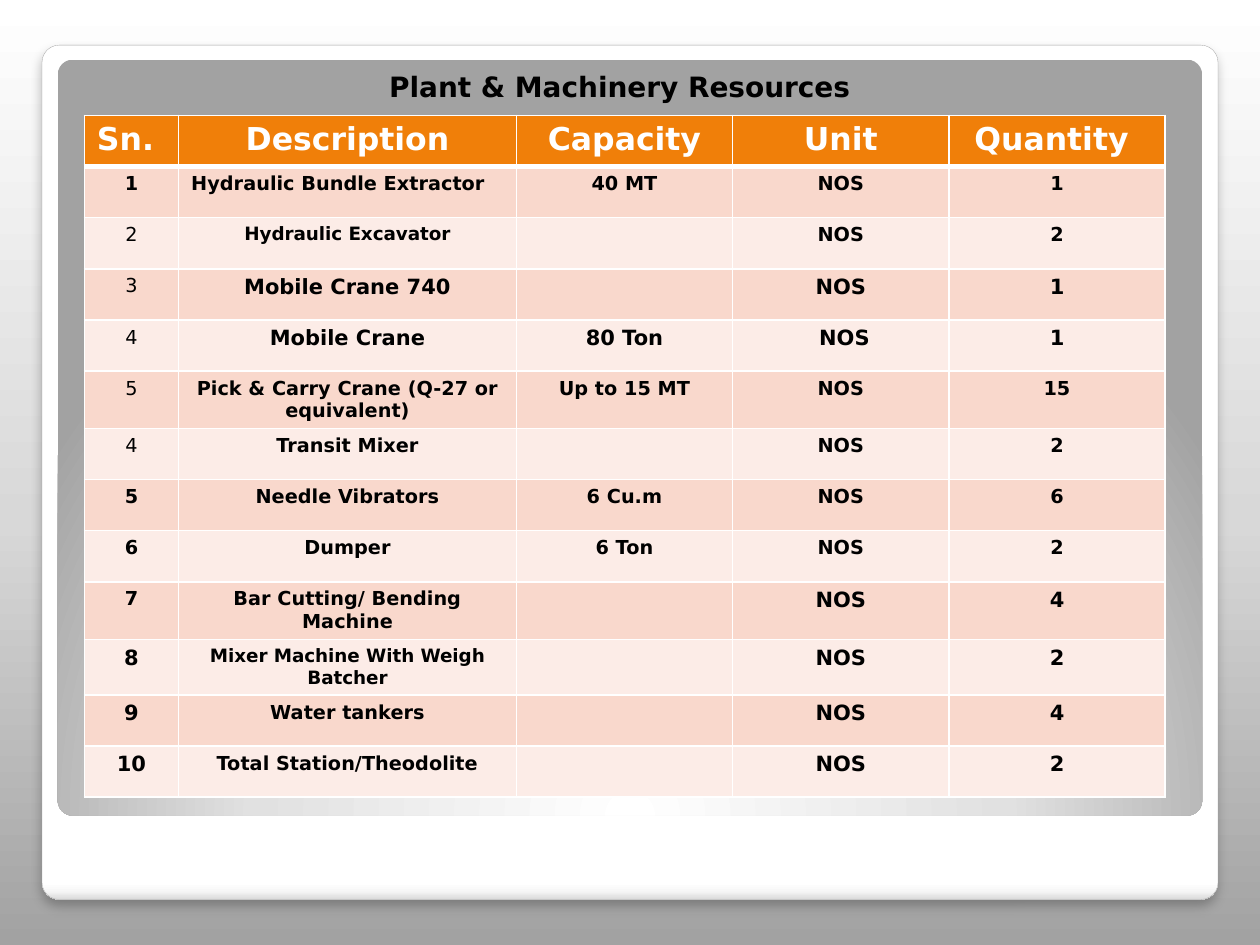
"""Build the Plant & Machinery Resources slide."""
import pptx
import pptx.dml.color
import pptx.enum.shapes
import pptx.enum.text
import pptx.oxml
import pptx.oxml.ns
import pptx.util

Pt = pptx.util.Pt
RGBColor = pptx.dml.color.RGBColor
CENTER = pptx.enum.text.PP_ALIGN.CENTER
LEFT = pptx.enum.text.PP_ALIGN.LEFT
qn = pptx.oxml.ns.qn
NS = pptx.oxml.ns.nsdecls("a")

FONT = "DejaVu Sans"
BLACK = RGBColor(0x00, 0x00, 0x00)
WHITE = RGBColor(0xFF, 0xFF, 0xFF)
ORANGE = RGBColor(0xF0, 0x7F, 0x09)
ROSE = RGBColor(0xF9, 0xD8, 0xCC)
PALE = RGBColor(0xFC, 0xEC, 0xE7)
SILVER = RGBColor(0xF7, 0xF7, 0xF7)
LIGHT = RGBColor(0xE1, 0xE1, 0xE1)
ASH = RGBColor(0xDA, 0xDA, 0xDA)
MIST = RGBColor(0xD8, 0xD8, 0xD8)
OUTLINE = RGBColor(0xA4, 0xA4, 0xA4)
GRAY = RGBColor(0xA2, 0xA2, 0xA2)

RADIAL = '<a:path path="circle"><a:fillToRect l="50000" t="175000" r="50000" b="-75000"/></a:path>'
LINEAR = '<a:lin ang="{}" scaled="0"/>'


def set_gradient(fill, props, stops, direction):
    fill.solid()
    gs = "".join(
        f'<a:gs pos="{pos * 1000}"><a:srgbClr val="{color}"/></a:gs>' for pos, color in stops
    )
    grad = pptx.oxml.parse_xml(
        f'<a:gradFill {NS} rotWithShape="1"><a:gsLst>{gs}</a:gsLst>{direction}</a:gradFill>'
    )
    props.replace(props.find(qn("a:solidFill")), grad)


def add_text(tf, text, size, color, bold=True, align=CENTER):
    p = tf.paragraphs[0]
    p.alignment = align
    r = p.add_run()
    r.text = text
    r.font.name = FONT
    r.font.size = Pt(size)
    r.font.bold = bold
    r.font.color.rgb = color


prs = pptx.Presentation()
prs.slide_width, prs.slide_height = Pt(720), Pt(540)
s = prs.slides.add_slide(prs.slide_layouts[6])

bg_fill = s.background.fill
bg_fill.solid()
set_gradient(bg_fill, s._element.find(".//" + qn("p:bgPr")),
             [(0, GRAY), (45, MIST), (100, WHITE)], LINEAR.format(16200000))

panels = [
    ((24, 25.8, 672, 488.2),
     [(0, WHITE), (98, WHITE), (99, SILVER), (100, ASH)], LINEAR.format(5400000)),
    ((33, 34.1, 654, 432), [(0, WHITE), (55, LIGHT), (100, GRAY)], RADIAL),
]
cards = []
for box, stops, direction in panels:
    sp = s.shapes.add_shape(pptx.enum.shapes.MSO_SHAPE.ROUNDED_RECTANGLE, *map(Pt, box))
    sp.adjustments[0] = 0.02
    sp.shadow.inherit = False
    sp.line.fill.background()
    set_gradient(sp.fill, sp._element.spPr, stops, direction)
    cards.append(sp)

frame = cards[0]
frame.line.color.rgb = OUTLINE
frame.line.width = Pt(0.16)
frame._element.spPr.find(qn("a:effectLst")).append(pptx.oxml.parse_xml(
    f'<a:outerShdw {NS} blurRad="{Pt(6)}" dist="{Pt(4)}" dir="5400000" algn="tl" rotWithShape="0">'
    f'<a:srgbClr val="{BLACK}"><a:alpha val="25000"/></a:srgbClr></a:outerShdw>'
))

header = ["Sn.", "Description", "Capacity", "Unit", "Quantity "]
machines = [
    ("1", "Hydraulic Bundle Extractor", "40 MT", "NOS", "1"),
    ("2", "Hydraulic Excavator", "", "NOS", "2"),
    ("3", "Mobile Crane 740", "", "NOS", "1"),
    ("4", "Mobile Crane", "80 Ton", " NOS", "1"),
    ("5", "Pick & Carry Crane (Q-27 or equivalent)", "Up to 15 MT", "NOS", "15"),
    ("4", "Transit Mixer", "", "NOS", "2"),
    ("5", "Needle Vibrators", "6 Cu.m", "NOS", "6"),
    ("6", "Dumper", "6 Ton", "NOS", "2"),
    ("7", "Bar Cutting/ Bending Machine", "", "NOS", "4"),
    ("8", "Mixer Machine With Weigh Batcher", "", "NOS", "2"),
    ("9", "Water tankers", "", "NOS", "4"),
    ("10", "Total Station/Theodolite", "", "NOS", "2"),
]
rows = [header] + machines
row_sizes = {
    0: [18] * 5,
    2: [11, 10.5, 11, 11, 11],
    3: [11, 12, 12, 12, 12],
    4: [11, 12, 12, 12, 12],
    9: [11, 11, 11, 12, 12],
    10: [12, 10.5, 12, 12, 12],
    11: [12, 11, 12, 12, 12],
    12: [12, 11, 12, 12, 12],
}
left_cells = {(0, 0), (1, 1)}
widths = [53.9, 193, 123.6, 123.6, 123.6]
row_height = 29.2

table = s.shapes.add_table(len(rows), len(widths), Pt(48.2), Pt(66), Pt(sum(widths)),
                           Pt(row_height * len(rows))).table
table.horz_banding = False
for column, width in zip(table.columns, widths):
    column.width = Pt(width)

for i, values in enumerate(rows):
    table.rows[i].height = Pt(row_height)
    sizes = row_sizes.get(i, [11] * 5)
    row_fill = ORANGE if i == 0 else ROSE if i % 2 else PALE
    for j, text in enumerate(values):
        cell = table.cell(i, j)
        tcPr = cell._tc.get_or_add_tcPr()
        edges = {"L": 1, "R": 1, "T": 3 if i == 1 else 1, "B": 3 if i == 0 else 1}
        for side, weight in edges.items():
            tcPr.append(pptx.oxml.parse_xml(
                f'<a:ln{side} {NS} w="{Pt(weight)}"><a:solidFill>'
                f'<a:srgbClr val="{WHITE}"/></a:solidFill></a:ln{side}>'
            ))
        cell.fill.solid()
        cell.fill.fore_color.rgb = row_fill
        if text:
            add_text(cell.text_frame, text, sizes[j], BLACK if i else WHITE,
                     bold=not (j == 0 and 2 <= i <= 6),
                     align=LEFT if (i, j) in left_cells else CENTER)

title = s.shapes.add_textbox(Pt(48.2), Pt(36), Pt(612), Pt(39.6))
title.text_frame.word_wrap = True
add_text(title.text_frame, "Plant & Machinery Resources", 16, BLACK)

prs.save("out.pptx")
